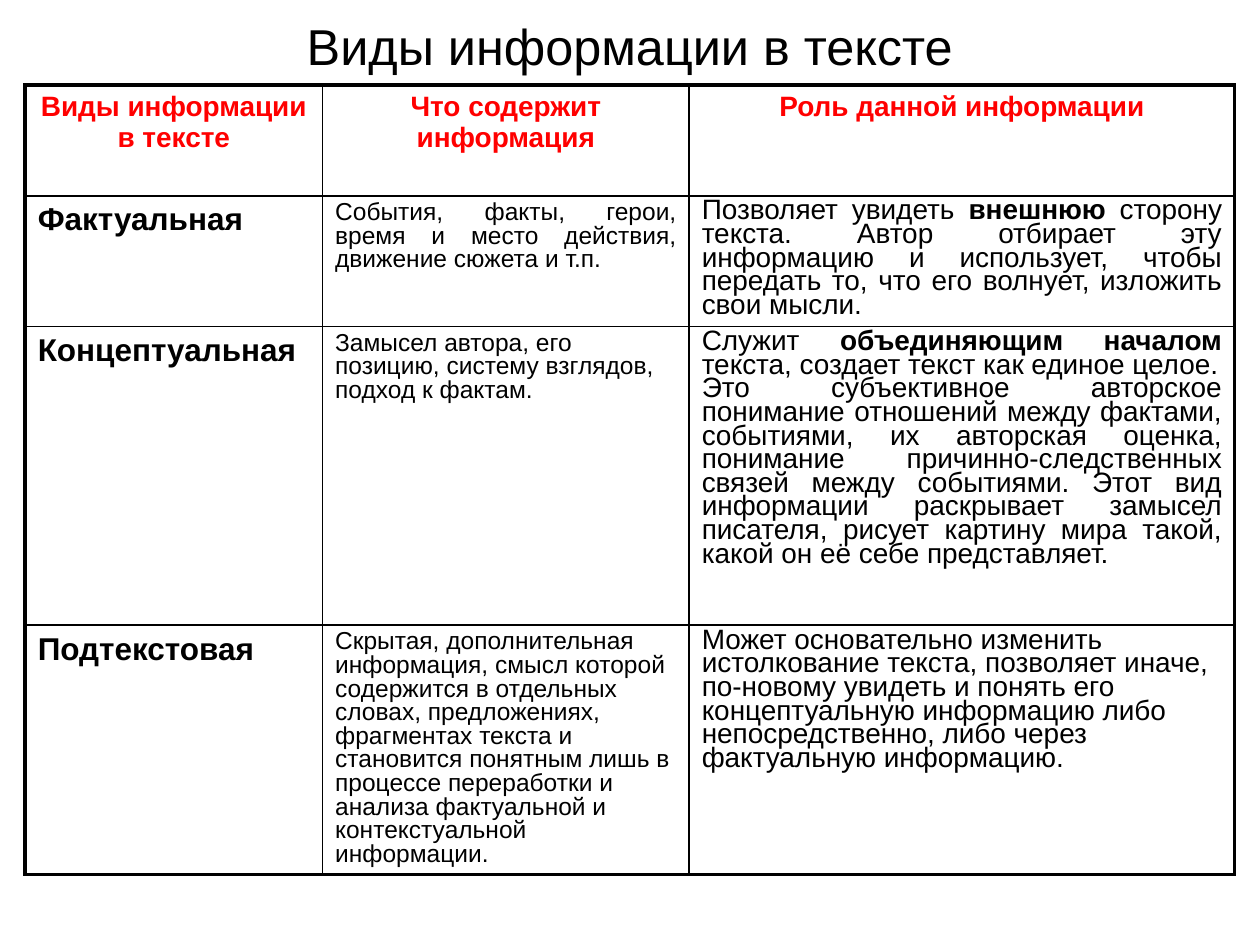
import pptx
import pptx.dml.color
import pptx.enum.text
import pptx.oxml
import pptx.oxml.ns
import pptx.util

WIDTH, HEIGHT = 10, 7.5
FONT = "Arial"
BLACK, RED, WHITE = "000000", "FF0000", "FFFFFF"
THIN, THICK = 1, 2.25
LEFT = pptx.enum.text.PP_ALIGN.LEFT
CENTER = pptx.enum.text.PP_ALIGN.CENTER
JUSTIFY = pptx.enum.text.PP_ALIGN.JUSTIFY

TITLE = "Виды информации в тексте"
COLUMN_WIDTHS = [2.36, 2.91, 4.33]
ROW_HEIGHTS = [0.88, 1.03, 2.37, 1.98]

# Text formats by role: header row, kind names, contents, purpose
HEADER = {"size": 16, "bold": True, "color": RED}
KIND = {"size": 18, "bold": True, "color": BLACK}
CONTENT = {"size": 14, "bold": False, "color": BLACK}
PURPOSE = {"size": 16, "bold": False, "color": BLACK}
TIGHT = 13.5

HEADINGS = ["Виды информации в тексте", "Что содержит информация", "Роль данной информации"]

# Each row: kind, (content, alignment), (purpose paragraphs, alignment).
# Text between asterisks is bold.
ROWS = [
    ("Фактуальная",
     ("События, факты, герои, время и место действия, движение сюжета и т.п.", JUSTIFY),
     (["Позволяет увидеть *внешнюю* сторону текста. Автор отбирает эту информацию и "
       "использует, чтобы передать то, что его волнует, изложить свои мысли. "], JUSTIFY)),
    ("Концептуальная",
     ("Замысел автора, его позицию, систему взглядов, подход к фактам.", LEFT),
     (["Служит *объединяющим началом *текста, создает текст как единое целое.",
       "Это субъективное авторское понимание отношений между фактами, событиями, их "
       "авторская оценка, понимание причинно-следственных связей между событиями. Этот "
       "вид информации раскрывает замысел писателя, рисует картину мира такой, какой он "
       "её себе представляет."], JUSTIFY)),
    ("Подтекстовая",
     ("Скрытая, дополнительная информация, смысл которой содержится в отдельных словах, "
      "предложениях, фрагментах текста и становится понятным лишь в процессе переработки "
      "и анализа фактуальной и контекстуальной информации.", LEFT),
     (["Может основательно изменить истолкование текста, позволяет иначе, по-новому "
       "увидеть и понять его концептуальную информацию либо непосредственно, либо через "
       "фактуальную информацию."], LEFT)),
]


def rgb(value):
    return pptx.dml.color.RGBColor.from_string(value)


def write_text(frame, paragraphs, text_format, alignment, line_spacing=None):
    for index, text in enumerate(paragraphs):
        paragraph = frame.paragraphs[0] if index == 0 else frame.add_paragraph()
        paragraph.alignment = alignment
        if line_spacing:
            paragraph.line_spacing = pptx.util.Pt(line_spacing)
        for part, words in enumerate(text.split("*")):
            run = paragraph.add_run()
            run.text = words
            values = {"name": FONT, "size": pptx.util.Pt(text_format["size"]),
                      "bold": text_format["bold"] or part % 2 == 1}
            for name, value in values.items():
                setattr(run.font, name, value)
            run.font.color.rgb = rgb(text_format["color"])


def set_borders(cell, widths):
    properties = cell._tc.get_or_add_tcPr()
    for position, (side, width) in enumerate(widths.items()):
        line = pptx.oxml.parse_xml(
            f'<a:{side} {pptx.oxml.ns.nsdecls("a")} w="{pptx.util.Pt(width)}">'
            f'<a:solidFill><a:srgbClr val="{BLACK}"/></a:solidFill></a:{side}>')
        properties.insert(position, line)


def add_title(slide, box):
    shape = slide.shapes.add_textbox(*map(pptx.util.Inches, box))
    frame = shape.text_frame
    values = {"word_wrap": True, "vertical_anchor": pptx.enum.text.MSO_ANCHOR.MIDDLE,
              "margin_top": 0, "margin_bottom": 0}
    for name, value in values.items():
        setattr(frame, name, value)
    write_text(frame, [TITLE], {"size": 28.8, "bold": False, "color": BLACK}, CENTER)


def add_information_table(slide, box):
    row_count, column_count = len(ROW_HEIGHTS), len(COLUMN_WIDTHS)
    table = slide.shapes.add_table(row_count, column_count, *map(pptx.util.Inches, box)).table
    table.first_row = table.horz_banding = False
    for column, width in zip(table.columns, COLUMN_WIDTHS):
        column.width = pptx.util.Inches(width)
    for row, height in zip(table.rows, ROW_HEIGHTS):
        row.height = pptx.util.Inches(height)

    # White cells, thin inner lines and a thick outer frame
    for row in range(row_count):
        for column in range(column_count):
            cell = table.cell(row, column)
            cell.fill.solid()
            cell.fill.fore_color.rgb = rgb(WHITE)
            outer = {"lnL": column == 0, "lnR": column == column_count - 1,
                     "lnT": row == 0, "lnB": row == row_count - 1}
            set_borders(cell, {side: THICK if edge else THIN for side, edge in outer.items()})

    # Wording
    for column, heading in enumerate(HEADINGS):
        write_text(table.cell(0, column).text_frame, [heading], HEADER, CENTER)
    for row, (kind, content, purpose) in enumerate(ROWS, start=1):
        frames = [table.cell(row, column).text_frame for column in range(column_count)]
        write_text(frames[0], [kind], KIND, LEFT)
        write_text(frames[1], [content[0]], CONTENT, content[1], TIGHT)
        write_text(frames[2], purpose[0], PURPOSE, purpose[1], TIGHT)


def main():
    presentation = pptx.Presentation()
    presentation.slide_width = pptx.util.Inches(WIDTH)
    presentation.slide_height = pptx.util.Inches(HEIGHT)
    slide = presentation.slides.add_slide(presentation.slide_layouts[6])
    add_title(slide, (0.05 * WIDTH, 0.028 * HEIGHT, 0.9 * WIDTH, 0.041 * HEIGHT))
    add_information_table(
        slide, (0.02 * WIDTH, 0.09 * HEIGHT, sum(COLUMN_WIDTHS), sum(ROW_HEIGHTS)))
    presentation.save("out.pptx")


if __name__ == "__main__":
    main()
